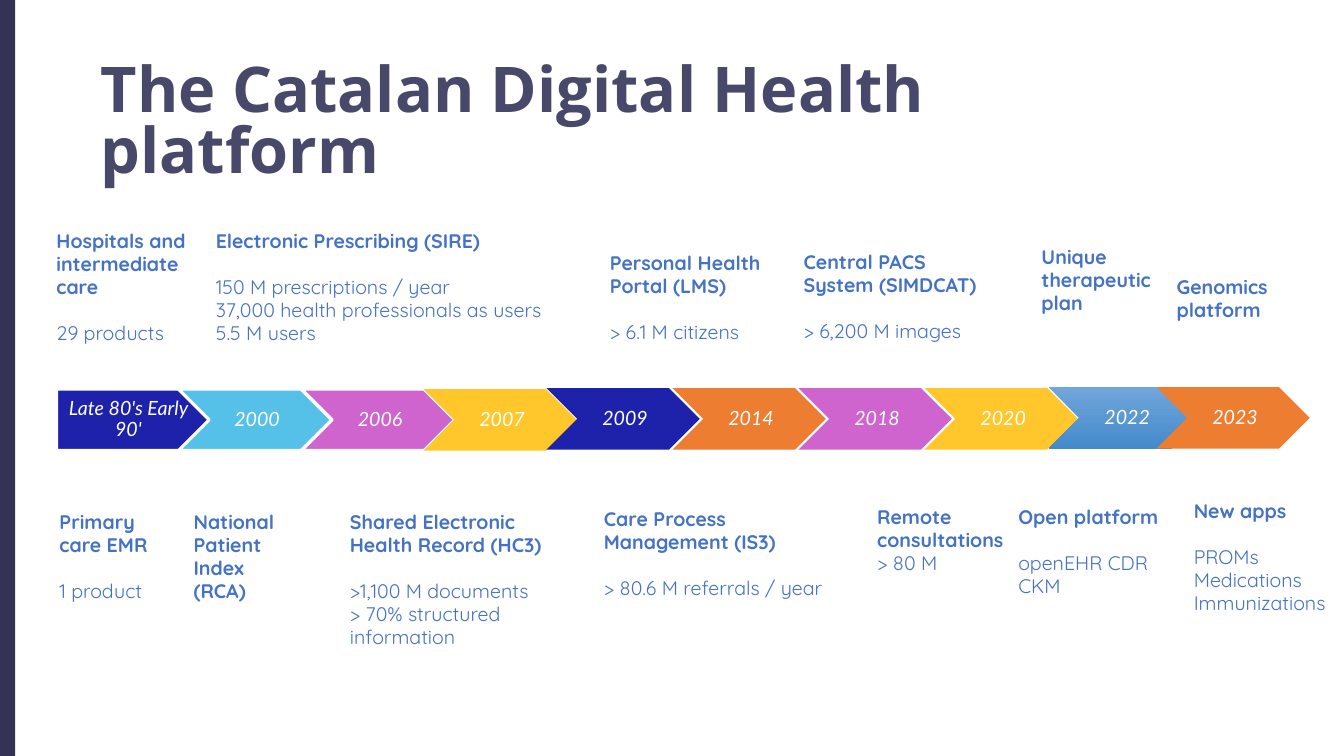
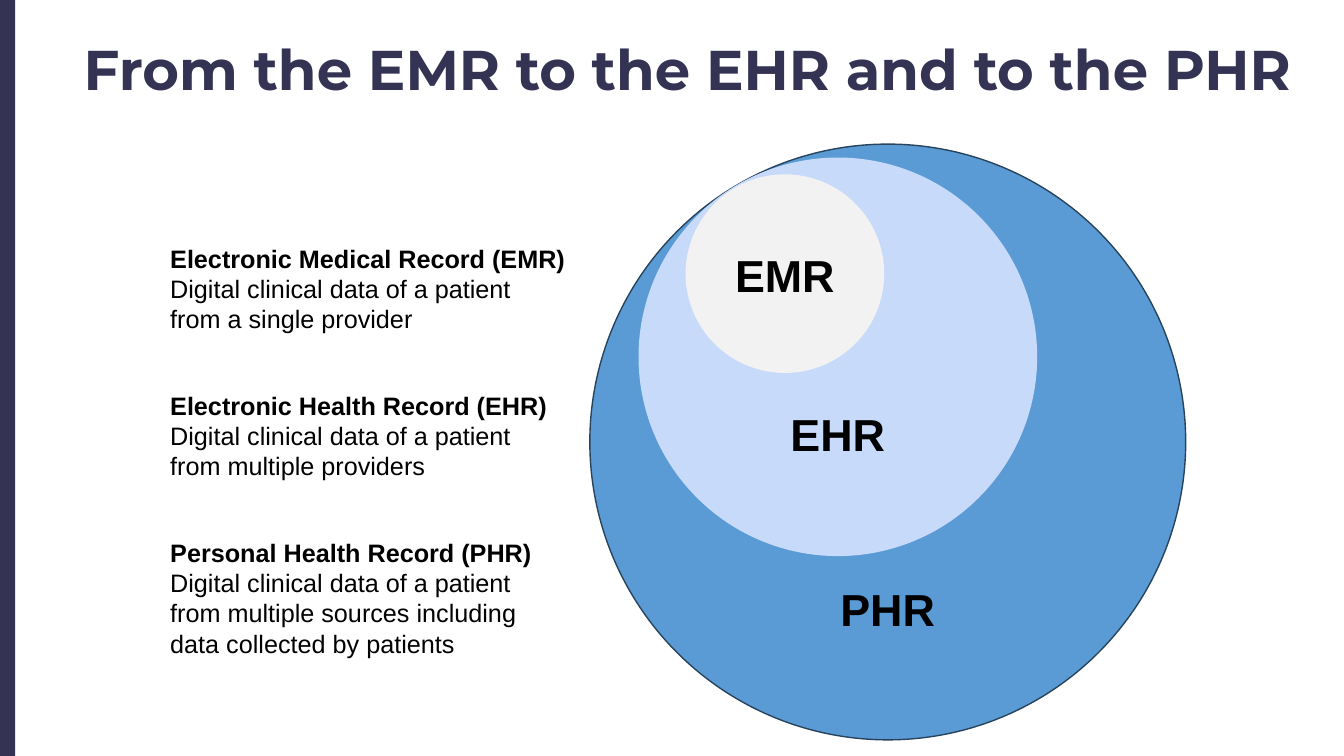
from dataclasses import dataclass

from pptx import Presentation
from pptx.dml.color import RGBColor
from pptx.enum.shapes import MSO_SHAPE
from pptx.enum.text import MSO_ANCHOR, MSO_AUTO_SIZE, PP_ALIGN
from pptx.util import Inches, Pt

RECTANGLE = MSO_SHAPE.RECTANGLE
PENTAGON = MSO_SHAPE.PENTAGON
CHEVRON = MSO_SHAPE.CHEVRON
OVAL = MSO_SHAPE.OVAL
TOP, MIDDLE, BOTTOM = MSO_ANCHOR.TOP, MSO_ANCHOR.MIDDLE, MSO_ANCHOR.BOTTOM
LEFT, CENTER = PP_ALIGN.LEFT, PP_ALIGN.CENTER
NO_AUTOFIT = MSO_AUTO_SIZE.NONE
TITLE_ONLY = 5


@dataclass(frozen=True)
class Theme:
    band: str = "343354"
    title: str = "48486A"
    note: str = "4472C4"
    white: str = "FFFFFF"
    black: str = "000000"
    navy: str = "1E22AA"
    sky: str = "55C1E9"
    orchid: str = "D064CE"
    amber: str = "FFC72C"
    orange: str = "ED7D31"
    blue_top: str = "71A6DB"
    blue_bottom: str = "448ACA"
    phr: str = "5B9BD5"
    phr_outline: str = "28445D"
    ehr: str = "C8DAF9"
    emr: str = "F2F2F2"
    title_font: str = "Open Sans"
    accent_title_font: str = "Montserrat"
    note_font: str = "Quicksand"
    year_font: str = "Lato"
    body_font: str = "Arial"
    title_size: float = 45
    accent_title_size: float = 40
    small_size: float = 14
    body_size: float = 18
    circle_size: float = 32
    note_line: float = 16.4


@dataclass(frozen=True)
class Box:
    left: float
    top: float
    width: float
    height: float

    def inner(self, x, y, width, height):
        return Box(self.left + x, self.top + y, width, height)

    def lengths(self):
        return [Inches(v) for v in (self.left, self.top, self.width, self.height)]


THEME = Theme()

ARROWS = [
    ("Late 80's Early 90'", 0, 0.02, THEME.navy, True),
    ("2000", 1.21, 0.02, THEME.sky, True),
    ("2006", 2.43, 0.02, THEME.orchid, True),
    ("2007", 3.64, 0.02, THEME.amber, False),
    ("2009", 4.86, 0.01, THEME.navy, False),
    ("2014", 6.11, 0.01, THEME.orange, False),
    ("2018", 7.36, 0.01, THEME.orchid, False),
    ("2020", 8.61, 0.01, THEME.amber, False),
    ("2022", 9.84, 0, (THEME.blue_top, THEME.blue_bottom), False),
    ("2023", 10.91, 0, THEME.orange, False),
]

UPPER_NOTES = [
    (0, 0, 1.33, "Hospitals and intermediate care", ["29 products"], True),
    (1.58, 0, 3.75, "Electronic Prescribing (SIRE)",
     ["150 M prescriptions / year", "37,000 health professionals as users",
      "5.5 M users"], True),
    (5.49, 0.22, 1.77, "Personal Health Portal (LMS)", ["> 6.1 M citizens"], True),
    (7.41, 0.21, 1.92, "Central PACS System (SIMDCAT)", ["> 6,200 M images"], True),
    (9.77, 0.16, 1.1, "Unique therapeutic plan", [], False),
    (11.11, 0.45, 1.1, "Genomics platform", [], False),
]

LOWER_NOTES = [
    (0.03, 0.11, 1.16, "Primary care EMR", ["1 product"], True),
    (1.36, 0.11, 0.92, "National Patient Index (RCA)", [], False),
    (2.91, 0.11, 2.26, "Shared Electronic Health Record (HC3)",
     [">1,100 M documents", "> 70% structured information"], True),
    (5.43, 0.08, 2.26, "Care Process Management (IS3)",
     ["> 80.6 M referrals / year"], True),
    (8.14, 0.06, 1.45, "Remote consultations", ["> 80 M"], False),
    (9.54, 0.06, 1.44, "Open platform", ["openEHR CDR", "CKM"], True),
    (11.28, 0, 1.45, "New apps", ["PROMs", "Medications", "Immunizations"], True),
]

CIRCLES = [
    ("PHR", 0, 0, 5.91, 0.17, THEME.phr, THEME.phr_outline),
    ("EHR", 0.49, 0.14, 3.94, 0.36, THEME.ehr, THEME.ehr),
    ("EMR", 0.95, 0.3, 1.97, 0.42, THEME.emr, None),
]

DEFINITIONS = [
    ("Electronic Medical Record (EMR)",
     ["Digital clinical data of a patient", "from a single provider"]),
    ("Electronic Health Record (EHR)",
     ["Digital clinical data of a patient", "from multiple providers"]),
    ("Personal Health Record (PHR)",
     ["Digital clinical data of a patient", "from multiple sources including",
      "data collected by patients"]),
]


def rgb(color):
    return RGBColor.from_string(color)


def style(paragraph, font, size, color, bold=False, italic=False, align=LEFT):
    paragraph.alignment = align
    for run in paragraph.runs:
        run.font.name = font
        run.font.size = Pt(size)
        run.font.color.rgb = rgb(color)
        run.font.bold = bold
        run.font.italic = italic


def set_frame(frame, anchor, left, top, right, bottom):
    frame.word_wrap = True
    frame.auto_size = NO_AUTOFIT
    frame.vertical_anchor = anchor
    frame.margin_left, frame.margin_top = Inches(left), Inches(top)
    frame.margin_right, frame.margin_bottom = Inches(right), Inches(bottom)


def add_figure(slide, preset, box, fill, outline=None, weight=1):
    figure = slide.shapes.add_shape(preset, *box.lengths())
    figure.shadow.inherit = False
    if isinstance(fill, tuple):
        figure.fill.gradient()
        figure.fill.gradient_angle = 270
        for stop, color in zip(figure.fill.gradient_stops, fill):
            stop.color.rgb = rgb(color)
    else:
        figure.fill.solid()
        figure.fill.fore_color.rgb = rgb(fill)
    if outline:
        figure.line.color.rgb = rgb(outline)
        figure.line.width = Pt(weight)
    else:
        figure.line.fill.background()
    return figure


def add_side_band(slide, layout):
    band = add_figure(slide, RECTANGLE, Box(0, 0, 0.15, 7.5), THEME.band)
    layout.shapes.element.append(band.element)


def add_title(slide, box, text, font, size, color):
    title = slide.shapes.title
    title.left, title.top, title.width, title.height = box.lengths()
    set_frame(title.text_frame, BOTTOM, 0.13, 0.13, 0.13, 0.13)
    title.text_frame.text = text
    heading = title.text_frame.paragraphs[0]
    heading.line_spacing = 0.8
    style(heading, font, size, color, bold=True)


def add_headed_text(slide, box, heading, details, font, size, color):
    frame = slide.shapes.add_textbox(*box.lengths()).text_frame
    frame.text = "\n".join([heading, *details])
    for index, paragraph in enumerate(frame.paragraphs):
        style(paragraph, font, size, color, bold=index == 0)
    return frame


def add_arrows(slide, box):
    for index, (period, x, y, fill, outlined) in enumerate(ARROWS):
        arrow = add_figure(slide, CHEVRON if index else PENTAGON,
                           box.inner(x, y, 1.52, box.height), fill,
                           THEME.white if outlined else None, 2.25)
        set_frame(arrow.text_frame, MIDDLE, 0.06 if index else 0.08, 0.04, 0.02, 0.04)
        arrow.text_frame.text = period
        label = arrow.text_frame.paragraphs[0]
        label.line_spacing = 0.9
        style(label, THEME.year_font, THEME.small_size, THEME.white,
              italic=True, align=CENTER)


def add_notes(slide, box, notes):
    for x, y, width, heading, details, spaced in notes:
        frame = add_headed_text(slide, box.inner(x, y, width, box.height - y),
                                heading, details, THEME.note_font,
                                THEME.small_size, THEME.note)
        set_frame(frame, TOP, 0, 0.05, 0, 0.05)
        for paragraph in frame.paragraphs:
            paragraph.line_spacing = Pt(THEME.note_line)
        if spaced:
            frame.paragraphs[0].space_after = Pt(THEME.note_line)


def add_circles(slide, box):
    for name, x, y, diameter, lift, fill, outline in CIRCLES:
        circle = add_figure(slide, OVAL, box.inner(x, y, diameter, diameter),
                            fill, outline)
        set_frame(circle.text_frame, BOTTOM, 0.1, 0.05, 0.1, lift)
        circle.text_frame.text = name
        style(circle.text_frame.paragraphs[0], THEME.body_font, THEME.circle_size,
              THEME.black, bold=True, align=CENTER)


def add_definitions(slide, box):
    step = 1.46
    for index, (heading, details) in enumerate(DEFINITIONS):
        frame = add_headed_text(slide, box.inner(0, index * step, box.width, 1.31),
                                heading, details, THEME.body_font,
                                THEME.body_size, THEME.black)
        set_frame(frame, TOP, 0.1, 0.05, 0.1, 0.05)


def build_timeline(slide):
    add_title(slide, Box(0.87, 0.3, 10.5, 1.67), "The Catalan Digital Health platform",
              THEME.title_font, THEME.title_size, THEME.title)
    add_arrows(slide, Box(0.56, 3.84, 12.43, 0.61))
    add_notes(slide, Box(0.56, 2.23, 12.73, 1.22), UPPER_NOTES)
    add_notes(slide, Box(0.56, 4.91, 12.73, 1.56), LOWER_NOTES)


def build_records(slide):
    add_title(slide, Box(0.7, 0.2, 12.6, 0.93), "From the EMR to the EHR and to the PHR",
              THEME.accent_title_font, THEME.accent_title_size, THEME.band)
    add_circles(slide, Box(5.85, 1.43, 5.91, 5.91))
    add_definitions(slide, Box(1.59, 2.36, 4.2, 4.24))


def main():
    deck = Presentation()
    deck.slide_width, deck.slide_height = Inches(13.33), Inches(7.5)
    layout = deck.slide_layouts[TITLE_ONLY]
    timeline = deck.slides.add_slide(layout)
    add_side_band(timeline, layout)
    build_timeline(timeline)
    build_records(deck.slides.add_slide(layout))
    deck.save("out.pptx")


if __name__ == "__main__":
    main()
